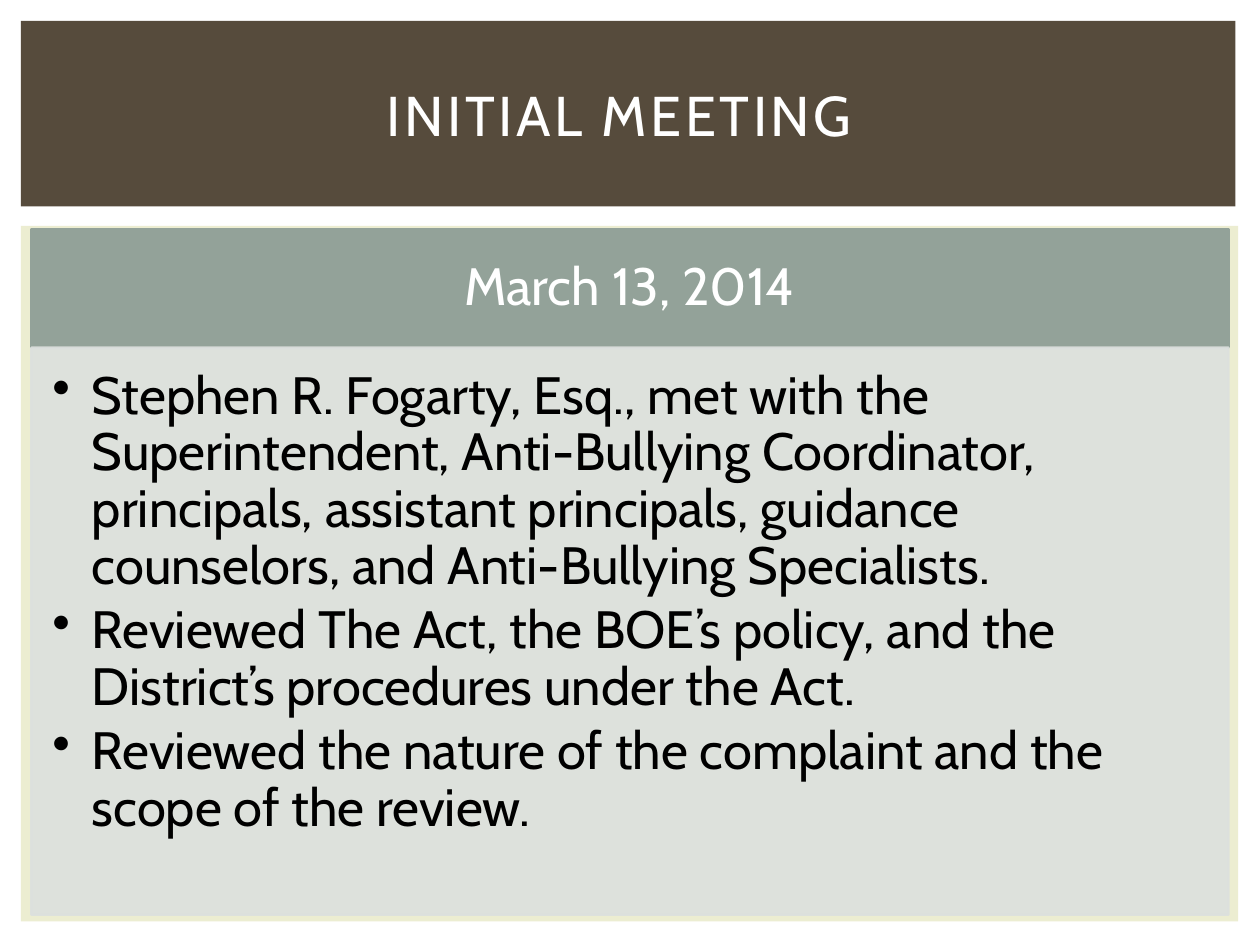
from lxml.etree import SubElement
from pptx import Presentation
from pptx.dml.color import RGBColor
from pptx.enum.shapes import MSO_SHAPE as Shape
from pptx.enum.text import MSO_ANCHOR as Anchor, PP_ALIGN as Align
from pptx.oxml.ns import qn
from pptx.util import Pt

FONT = "Cabin"
WHITE = RGBColor(0xFF, 0xFF, 0xFF)
BLACK = RGBColor(0x00, 0x00, 0x00)
CREAM = RGBColor(0xEC, 0xED, 0xD1)
BROWN = RGBColor(0x56, 0x4B, 0x3C)
SAGE = RGBColor(0x93, 0xA2, 0x99)
PALE = RGBColor(0xDC, 0xE0, 0xDE)

PANEL_LEFT, PANEL_TOP, PANEL_WIDTH = 18, 131, 684
HEADER_HEIGHT, BODY_HEIGHT = 67.7, 324

DATE = "March 13, 2014"
POINTS = [
    "Stephen R. Fogarty, Esq., met with the Superintendent, Anti-Bullying "
    "Coordinator, principals, assistant principals, guidance counselors, "
    "and Anti-Bullying Specialists.",
    "Reviewed The Act, the BOE’s policy, and the District’s procedures under the Act.",
    "Reviewed the nature of the complaint and the scope of the review.",
]


def add_block(slide, left, top, width, height, color, outlined=False):
    shape = slide.shapes.add_shape(
        Shape.RECTANGLE, Pt(left), Pt(top), Pt(width), Pt(height))
    shape.shadow.inherit = False
    shape.fill.solid()
    shape.fill.fore_color.rgb = color
    if outlined:
        shape.line.color.rgb = color
        shape.line.width = Pt(1.5)
    else:
        shape.line.fill.background()
    return shape


def set_opacity(shape, percent):
    for color in shape.element.spPr.iter(qn("a:srgbClr")):
        SubElement(color, qn("a:alpha"), val=str(percent * 1000))


def set_text(shape, text, size, color, align, anchor, insets):
    text_frame = shape.text_frame
    text_frame.word_wrap = True
    text_frame.vertical_anchor = anchor
    (text_frame.margin_left, text_frame.margin_top,
     text_frame.margin_right, text_frame.margin_bottom) = map(Pt, insets)
    text_frame.text = text
    for paragraph in text_frame.paragraphs:
        paragraph.alignment = align
        for run in paragraph.runs:
            run.font.name = FONT
            run.font.size = Pt(size)
            run.font.color.rgb = color
    return text_frame.paragraphs


def add_bullet(paragraph, indent):
    properties = paragraph._p.get_or_add_pPr()
    properties.set("marL", str(Pt(indent)))
    properties.set("indent", str(-Pt(indent)))
    SubElement(properties, qn("a:buChar"), char="•")


def add_title(slide, text):
    box = slide.shapes.add_textbox(Pt(24), Pt(24), Pt(660), Pt(82.5))
    for paragraph in set_text(box, text, 32, WHITE, Align.CENTER,
                              Anchor.MIDDLE, (7.2, 3.6, 7.2, 3.6)):
        for run in paragraph.runs:
            run.font._element.set("spc", "200")


def add_panel(slide):
    # Date header
    header = add_block(slide, PANEL_LEFT, PANEL_TOP, PANEL_WIDTH,
                       HEADER_HEIGHT, SAGE, outlined=True)
    for paragraph in set_text(header, DATE, 30, WHITE, Align.CENTER,
                              Anchor.MIDDLE, (16.8, 9.6, 16.8, 9.6)):
        paragraph.line_spacing = 0.9

    # Bulleted body
    body = add_block(slide, PANEL_LEFT, PANEL_TOP + HEADER_HEIGHT, PANEL_WIDTH,
                     BODY_HEIGHT, PALE, outlined=True)
    set_opacity(body, 90)
    for paragraph in set_text(body, "\n".join(POINTS), 30, BLACK, Align.LEFT,
                              Anchor.TOP, (12, 12, 16.8, 19)):
        paragraph.level = 1
        paragraph.line_spacing = 0.9
        paragraph.space_after = Pt(4.5)
        add_bullet(paragraph, 22.5)


def main():
    presentation = Presentation()
    presentation.slide_width, presentation.slide_height = Pt(720), Pt(540)
    slide = presentation.slides.add_slide(presentation.slide_layouts[6])

    # Backdrop
    add_block(slide, 12, 129, 695.5, 397.5, CREAM)
    add_block(slide, 12, 12, 694, 106, BROWN)

    # Content
    add_panel(slide)
    add_title(slide, "INITIAL MEETING")
    presentation.save("out.pptx")


if __name__ == "__main__":
    main()
